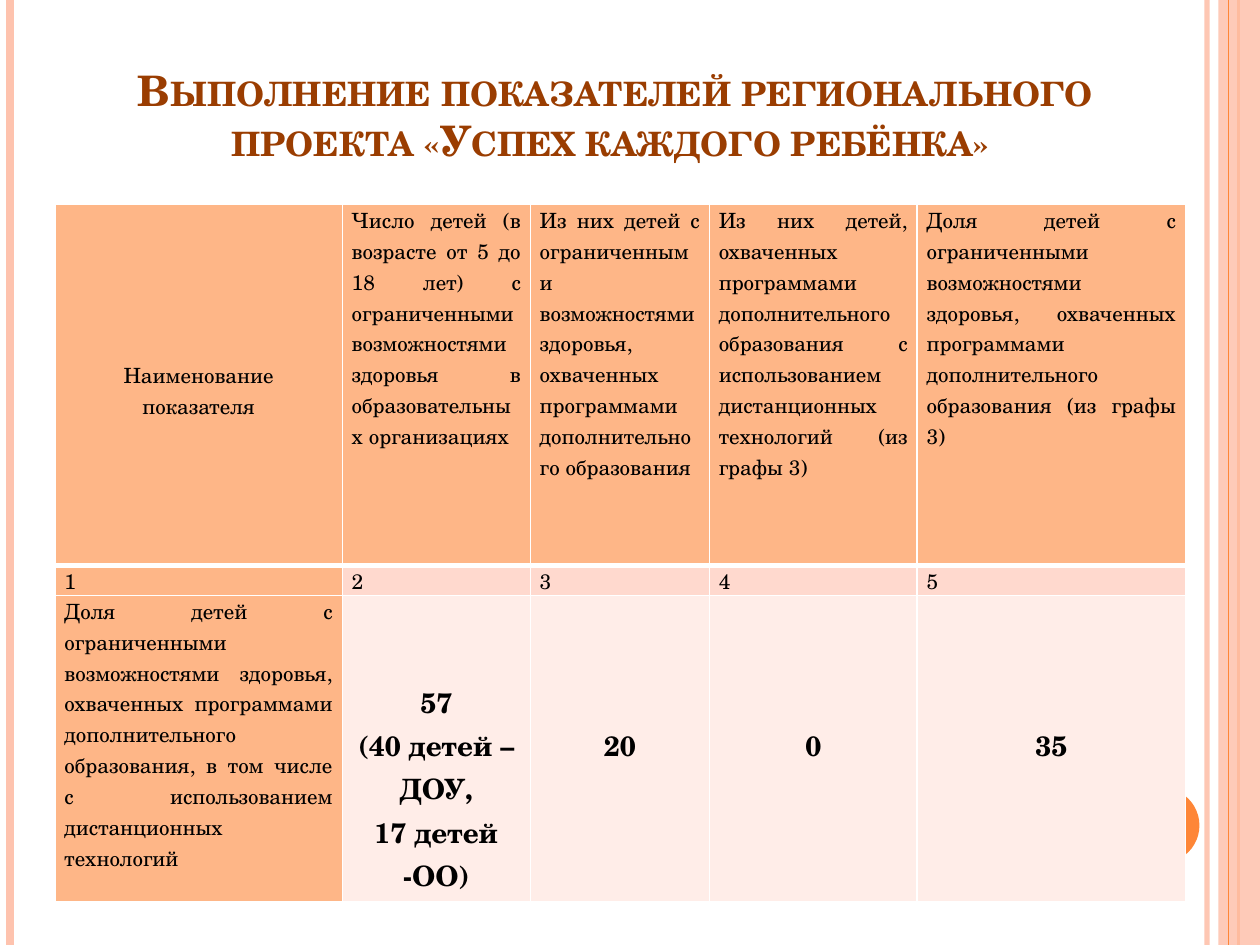
"""Build the slide on the indicators of the regional project for children."""
from lxml.etree import SubElement
from pptx import Presentation
from pptx.dml.color import RGBColor
from pptx.enum.shapes import MSO_CONNECTOR, MSO_SHAPE
from pptx.enum.text import MSO_ANCHOR, PP_ALIGN
from pptx.oxml.ns import qn
from pptx.util import Cm, Pt

FONT = "TeX Gyre Schola"
COLORS = {"orange": "FE8637", "peach": "FEC3AE", "title": "9A3D01", "text": "000000",
          "head": "FEB687", "number": "FFD9CE", "value": "FFEDE8", "border": "FFFFFF"}
WIDTH, HEIGHT = 25.4, 19.05
TITLE = "Выполнение показателей регионального проекта «Успех каждого ребёнка» "
HEADINGS = [
    "Наименование показателя",
    "Число детей (в возрасте от 5 до 18 лет) с ограниченными возможностями здоровья "
    "в образовательных организациях",
    "Из них детей с ограниченными возможностями здоровья, охваченных программами "
    "дополнительного образования",
    "Из них детей, охваченных программами дополнительного образования с использованием "
    "дистанционных технологий (из графы 3)",
    "Доля детей с ограниченными возможностями здоровья, охваченных программами "
    "дополнительного образования (из графы 3)",
]
INDICATOR = ("Доля детей с ограниченными возможностями здоровья, охваченных программами "
             "дополнительного образования, в том числе с использованием дистанционных технологий")
VALUES = ["57\n(40 детей – ДОУ,\n17 детей -ОО)", "20", "0", "35"]
ROWS = [HEADINGS, ["1", "2", "3", "4", "5"], [INDICATOR, *VALUES]]
ROW_FILLS = ["head", "number", "value"]
COLUMN_WIDTHS = [5.79, 3.79, 3.61, 4.19, 5.41]
ROW_HEIGHTS = [7.28, 0.6, 6.17]
TABLE_LEFT, TABLE_TOP = 1.11, 4.12
SIDE_MARGIN = 0.19

BODY = {"size": Pt(12), "bold": False, "name": FONT}
VALUE = {"size": Pt(16), "bold": True, "name": FONT}
HEADLINE = {"size": Pt(24), "bold": True, "name": FONT}
TOP_MARGINS = {(0, 0): 3.12, (2, 1): 1.73, (2, 2): 2.6, (2, 3): 2.6, (2, 4): 2.6}
RULES = [(24.33, "peach", 3, 93), (0.21, "peach", 4.5, 100), (24.97, "orange", 1.5, 100)]
INNER_RULE = (24.77, "orange", 0.75, 100)


def color(name):
    return RGBColor.from_string(COLORS[name])


def set_opacity(element, percent):
    if percent < 100:
        target = next(element.iter(qn("a:srgbClr")))
        SubElement(target, qn("a:alpha"), val=str(percent * 1000))


def add_rule(page, left, name, width, opacity):
    rule = page.shapes.add_connector(MSO_CONNECTOR.STRAIGHT, Cm(left), Cm(0), Cm(left), Cm(HEIGHT))
    rule.line.color.rgb = color(name)
    rule.line.width = Pt(width)
    properties = rule._element.spPr
    set_opacity(properties, opacity)
    SubElement(properties, qn("a:effectLst"))


def add_decoration(page, kind, place, name, opacity=100):
    shape = page.shapes.add_shape(kind, *map(Cm, place))
    shape.shadow.inherit = False
    shape.fill.solid()
    shape.fill.fore_color.rgb = color(name)
    shape.line.fill.background()
    set_opacity(shape._element.spPr, opacity)


def write(frame, text, style, align, name="text"):
    frame.word_wrap = True
    for index, line in enumerate(text.split("\n")):
        para = frame.add_paragraph() if index else frame.paragraphs[0]
        para.alignment = align
        para.line_spacing = 1.0
        span = para.add_run()
        span.text = line
        for key, value in style.items():
            setattr(span.font, key, value)
        span.font.color.rgb = color(name)


def add_title(page):
    box = page.shapes.add_textbox(Cm(0.9), Cm(0.53), Cm(23.01), Cm(2.92))
    frame = box.text_frame
    frame.vertical_anchor = MSO_ANCHOR.BOTTOM
    write(frame, TITLE, HEADLINE, PP_ALIGN.CENTER, "title")
    frame.paragraphs[0].runs[0].font._element.set("cap", "small")


def add_borders(cell, widths):
    properties = cell._tc.get_or_add_tcPr()
    for index, (side, width) in enumerate(widths.items()):
        border = properties.makeelement(qn(f"a:ln{side}"), {"w": str(Pt(width))})
        fill = SubElement(border, qn("a:solidFill"))
        SubElement(fill, qn("a:srgbClr"), val=COLORS["border"])
        properties.insert(index, border)


def add_indicators(page):
    table = page.shapes.add_table(len(ROWS), len(COLUMN_WIDTHS), Cm(TABLE_LEFT), Cm(TABLE_TOP),
                                  Cm(sum(COLUMN_WIDTHS)), Cm(sum(ROW_HEIGHTS))).table
    for column, width in zip(table.columns, COLUMN_WIDTHS):
        column.width = Cm(width)
    for row, (texts, height) in enumerate(zip(ROWS, ROW_HEIGHTS)):
        table.rows[row].height = Cm(height)
        for column, text in enumerate(texts):
            cell = table.cell(row, column)
            margin = TOP_MARGINS.get((row, column), 0)
            side = SIDE_MARGIN if row or column else 2 * SIDE_MARGIN
            layout = {"margin_left": Cm(side), "margin_right": Cm(side),
                      "margin_top": Cm(margin), "margin_bottom": Cm(0)}
            for key, value in layout.items():
                setattr(cell, key, value)
            cell.fill.solid()
            cell.fill.fore_color.rgb = color(ROW_FILLS[row] if column else "head")
            add_borders(cell, {"L": 1, "R": 1, "T": 3 if row == 1 else 1, "B": 3 if row == 0 else 1})
            style = VALUE if row == 2 and column else BODY
            align = PP_ALIGN.CENTER if margin else PP_ALIGN.JUSTIFY
            write(cell.text_frame, text, style, align)


def main():
    deck = Presentation()
    deck.slide_width, deck.slide_height = Cm(WIDTH), Cm(HEIGHT)
    page = deck.slides.add_slide(deck.slide_layouts[6])
    for rule in RULES:
        add_rule(page, *rule)
    add_decoration(page, MSO_SHAPE.RECTANGLE, (24.56, 0, 0.84, HEIGHT), "peach", 87)
    add_rule(page, *INNER_RULE)
    add_decoration(page, MSO_SHAPE.OVAL, (22.66, 15.88, 1.52, 1.52), "orange")
    add_title(page)
    add_indicators(page)
    deck.save("out.pptx")


if __name__ == "__main__":
    main()
